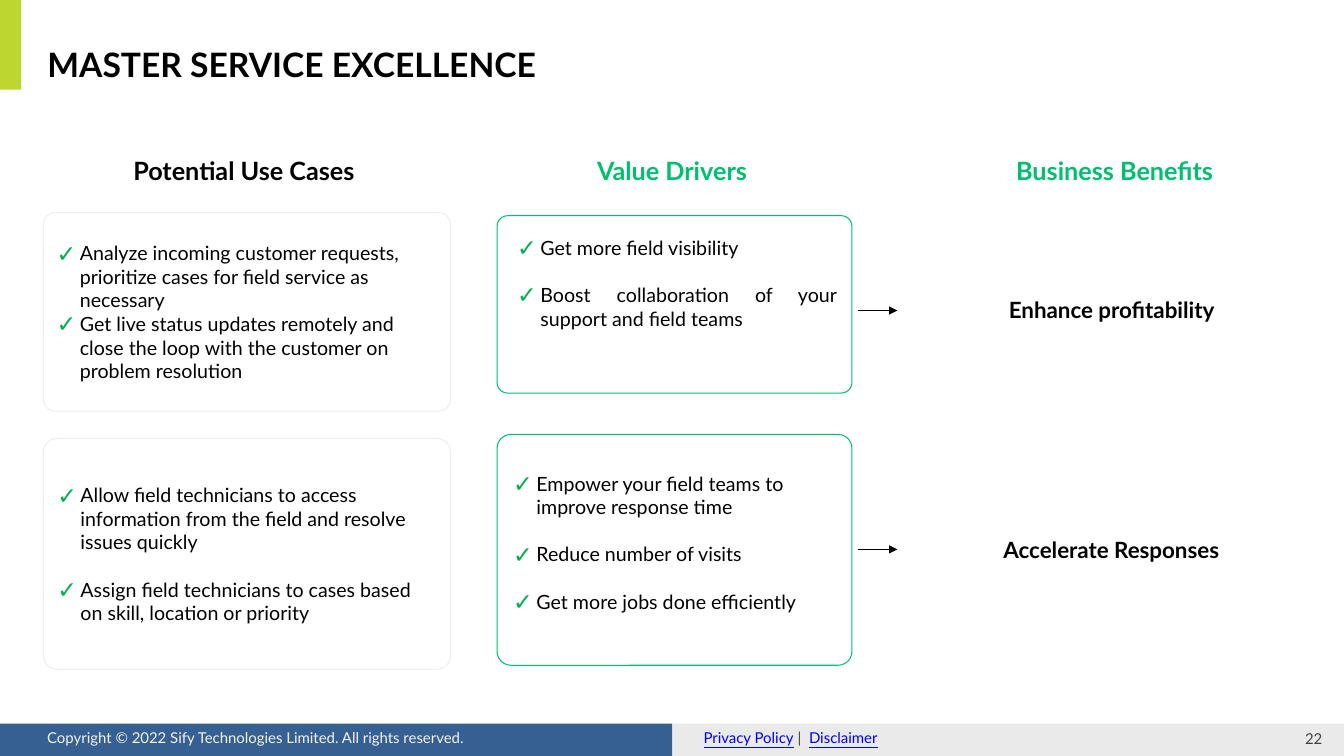
from lxml.etree import SubElement
from pptx import Presentation
from pptx.dml.color import RGBColor
from pptx.enum.shapes import MSO_CONNECTOR, MSO_SHAPE
from pptx.enum.text import MSO_ANCHOR, MSO_AUTO_SIZE, PP_ALIGN
from pptx.oxml.ns import qn
from pptx.util import Inches, Pt

BLACK, WHITE, GREEN = "000000", "FFFFFF", "00BF6F"
CARD_GREY, CHECK_GREEN = "EBEFF2", "00B050"
LINK_BLUE, FOOTER_GREY = "0000FF", "404040"
FOOTER_SIZE = 10.7
LIST_SIZE = 14
BLANK_LINE = 16.8
HANGING = Inches(0.23)


def color(hex_value):
    return RGBColor.from_string(hex_value)


def set_all(target, values):
    for name, value in values.items():
        setattr(target, name, value)


def place(shape, box):
    set_all(shape, dict(zip(("left", "top", "width", "height"), map(Inches, box))))


def set_frame(frame, insets, anchor=MSO_ANCHOR.TOP):
    sides = ("margin_left", "margin_top", "margin_right", "margin_bottom")
    set_all(frame, dict(zip(sides, map(Inches, insets))))
    set_all(frame, {"word_wrap": True, "vertical_anchor": anchor,
                    "auto_size": MSO_AUTO_SIZE.NONE})


def add_run(paragraph, text, size, hex_value, bold=False, underline=False):
    run = paragraph.add_run()
    run.text = text
    set_all(run.font, {"name": "Lato", "size": Pt(size), "bold": bold,
                       "underline": underline})
    run.font.color.rgb = color(hex_value)


def add_label(slide, box, runs, insets=(0.1, 0.1, 0.1, 0.1),
              align=PP_ALIGN.CENTER, anchor=MSO_ANCHOR.TOP):
    frame = slide.shapes.add_textbox(*map(Inches, box)).text_frame
    set_frame(frame, insets, anchor)
    paragraph = frame.paragraphs[0]
    paragraph.alignment = align
    for run in runs:
        add_run(paragraph, *run)


def add_block(slide, kind, box, fill, outline=None):
    block = slide.shapes.add_shape(kind, *map(Inches, box))
    block.shadow.inherit = False
    block.fill.solid()
    block.fill.fore_color.rgb = color(fill)
    if outline:
        block.line.color.rgb = color(outline)
        block.line.width = Pt(0.75)
    else:
        block.line.fill.background()
    return block


def add_card(slide, box, outline):
    card = add_block(slide, MSO_SHAPE.ROUNDED_RECTANGLE, box, WHITE, outline)
    card.adjustments[0] = 0.06
    return card


def add_check(paragraph):
    props = paragraph._p.get_or_add_pPr()
    props.set("marL", str(HANGING))
    props.set("indent", str(-HANGING))
    tint = SubElement(props, qn("a:buClr"))
    SubElement(tint, qn("a:srgbClr"), val=CHECK_GREEN)
    SubElement(props, qn("a:buSzPct"), val="120000")
    SubElement(props, qn("a:buFont"), typeface="Lato")
    SubElement(props, qn("a:buChar"), char="✓")


def fill_checklist(frame, items, gap=BLANK_LINE, align=PP_ALIGN.LEFT):
    for index, item in enumerate(items):
        paragraph = frame.add_paragraph() if index else frame.paragraphs[0]
        add_check(paragraph)
        set_all(paragraph, {"alignment": align, "space_before": Pt(gap if index else 0)})
        add_run(paragraph, item, LIST_SIZE, BLACK)


def add_arrow(slide, y):
    arrow = slide.shapes.add_connector(
        MSO_CONNECTOR.STRAIGHT, Inches(8.51), Inches(y), Inches(8.9), Inches(y))
    arrow.line.color.rgb = color(BLACK)
    arrow.line.width = Pt(0.75)
    SubElement(arrow.line._get_or_add_ln(), qn("a:tailEnd"), type="triangle")
    SubElement(arrow._element.spPr, qn("a:effectLst"))


def add_footer(slide):
    add_block(slide, MSO_SHAPE.RECTANGLE, (0, 7.18, 6.67, 0.32), "376092")
    add_block(slide, MSO_SHAPE.RECTANGLE, (6.67, 7.18, 6.67, 0.32), "EAEAEA")
    insets = (0.1, 0.05, 0.1, 0.05)
    add_label(slide, (0.37, 7.18, 5.67, 0.28),
              [("Copyright © 2022 Sify Technologies Limited. All rights reserved.",
                FOOTER_SIZE, "F2F2F2")], insets, PP_ALIGN.LEFT)
    add_label(slide, (6.88, 7.18, 4.41, 0.28),
              [("Privacy Policy", FOOTER_SIZE, LINK_BLUE, False, True),
               (" |  ", FOOTER_SIZE, FOOTER_GREY),
               ("Disclaimer", FOOTER_SIZE, LINK_BLUE, False, True)],
              insets, PP_ALIGN.LEFT)
    add_label(slide, (12.66, 7.22, 0.61, 0.21), [("22", FOOTER_SIZE, FOOTER_GREY)],
              (0.13, 0, 0, 0), anchor=MSO_ANCHOR.MIDDLE)


def add_title(slide):
    add_block(slide, MSO_SHAPE.RECTANGLE, (0, 0, 0.21, 0.89), "BED730")
    title = slide.shapes.title
    place(title, (0.47, 0.39, 10.99, 0.5))
    set_frame(title.text_frame, (0, 0.05, 0.1, 0.05), MSO_ANCHOR.MIDDLE)
    heading = title.text_frame.paragraphs[0]
    heading.alignment = PP_ALIGN.LEFT
    add_run(heading, "MASTER SERVICE EXCELLENCE", 24, BLACK, True)


def add_use_cases(slide):
    cases = [
        ((0.43, 2.11, 4.04, 1.97), 0,
         ["Analyze incoming customer requests, prioritize cases for field service as necessary",
          "Get live status updates remotely and close the loop with the customer on "
          "problem resolution"]),
        ((0.43, 4.35, 4.04, 2.29), BLANK_LINE,
         ["Allow field technicians to access information from the field and resolve "
          "issues quickly",
          "Assign field technicians to cases based on skill, location or priority"]),
    ]
    for box, gap, items in cases:
        frame = add_card(slide, box, CARD_GREY).text_frame
        set_frame(frame, (0.1, 0.1, 0.1, 0.1), MSO_ANCHOR.MIDDLE)
        fill_checklist(frame, items, gap)


def add_value_drivers(slide):
    drivers = [
        (1, (4.93, 2.14, 3.52, 1.76), (5.03, 2.29, 3.37, 1.51), PP_ALIGN.JUSTIFY,
         ["Get more field visibility",
          "Boost collaboration of your support and field teams"]),
        (2, (4.93, 4.31, 3.52, 2.29), (4.99, 4.63, 3.35, 1.6), PP_ALIGN.LEFT,
         ["Empower your field teams to improve response time",
          "Reduce number of visits",
          "Get more jobs done efficiently"]),
    ]
    for index, card_box, list_box, align, items in drivers:
        add_card(slide, card_box, GREEN)
        driver_list = slide.placeholders[index]
        place(driver_list, list_box)
        set_frame(driver_list.text_frame, (0.1, 0.05, 0.1, 0.05))
        fill_checklist(driver_list.text_frame, items, align=align)
        # Bring the list in front of its card
        slide.shapes._spTree.append(driver_list._element)


def main():
    deck = Presentation()
    deck.slide_width, deck.slide_height = Inches(13.33), Inches(7.5)
    slide = deck.slides.add_slide(deck.slide_layouts[3])

    # Page frame
    add_footer(slide)
    add_title(slide)

    # Column headings
    for left, width, heading, tint in [(0.65, 3.6, "Potential Use Cases ", BLACK),
                                       (5.22, 2.89, "Value Drivers", GREEN),
                                       (9.42, 3.27, "Business Benefits", GREEN)]:
        add_label(slide, (left, 1.44, width, 0.5), [(heading, 18, tint, True)])

    # Cards with their checklists
    add_use_cases(slide)
    add_value_drivers(slide)

    # Benefits and the arrows that lead to them
    for arrow_y, top, benefit in [(3.08, 2.84, "Enhance profitability "),
                                  (5.45, 5.22, "Accelerate Responses ")]:
        add_arrow(slide, arrow_y)
        add_label(slide, (9.29, top, 3.52, 0.47), [(benefit, 16, BLACK, True)])

    deck.save("out.pptx")


if __name__ == "__main__":
    main()
